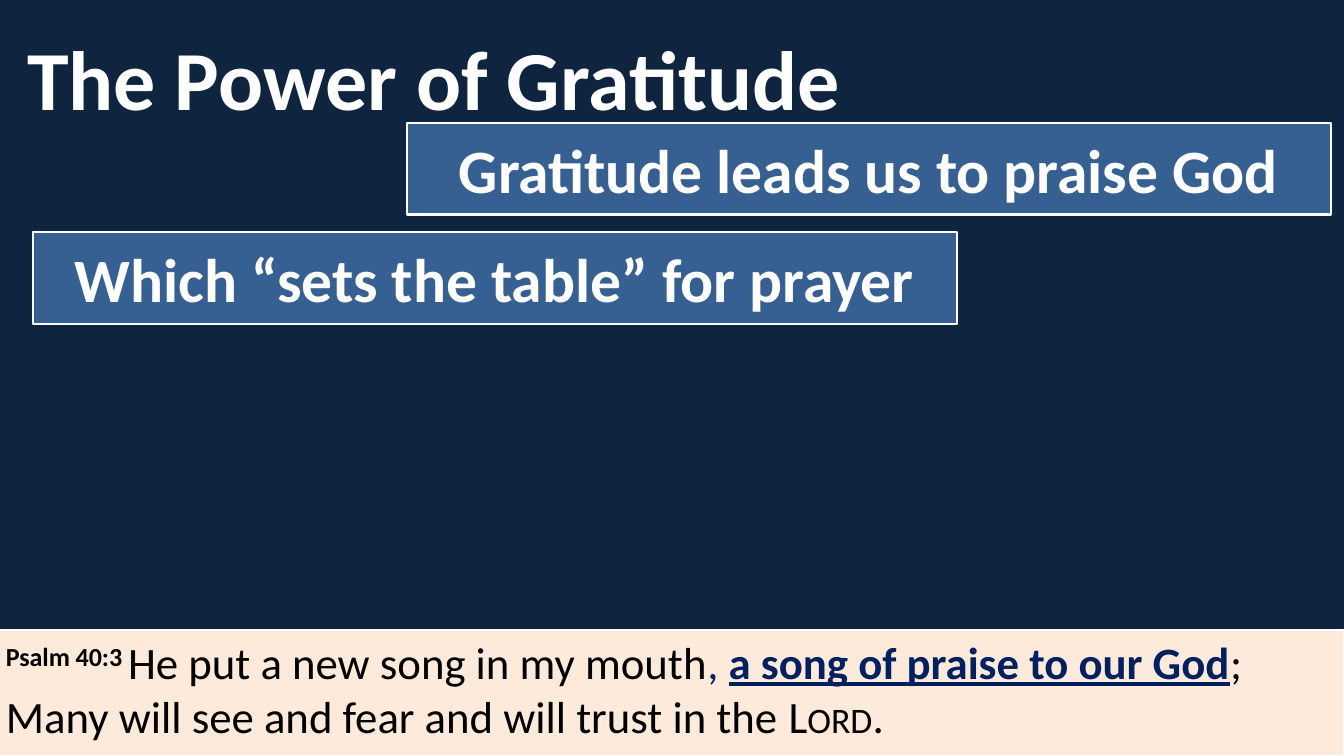
from pptx import Presentation
from pptx.dml.color import RGBColor
from pptx.enum.shapes import MSO_SHAPE as Preset
from pptx.enum.text import MSO_ANCHOR as Anchor, MSO_AUTO_SIZE as AutoSize, PP_ALIGN as Align
from pptx.util import Emu, Pt

PAGE_SIZE = (1344, 756)
SCALE = 914400 / 100.8
FONT = "Calibri"
NAVY, BLUE, CREAM, WHITE, BLACK, INK = "0F243E", "376092", "FDEADA", "FFFFFF", "000000", "002060"

TITLE = "The Power of Gratitude"
TITLE_AREA = (17, 14, 924, 126)

BANNER_SIZE = (924, 92)
BANNERS = [
    ("Gratitude leads us to praise God", (407, 123)),
    ("Which “sets the table” for prayer", (33, 232)),
]

VERSE_AREA = (-4, 630, 1348, 126)
VERSE = [
    [
        ("Psalm 40:3 ", {"bold": True}, {"baseline": "30000"}),
        ("He put a new song in my mouth", {}, {}),
        (", ", {"color": INK}, {}),
        ("a song of praise to our God", {"color": INK, "bold": True, "underline": True}, {}),
        (";", {}, {}),
    ],
    [
        ("Many will see and fear and will trust in the ", {}, {}),
        ("Lord", {}, {"cap": "small"}),
        (".", {}, {}),
    ],
]


def px(value):
    return Emu(round(value * SCALE))


def rgb(code):
    return RGBColor.from_string(code)


def place(box, area):
    for name, value in zip(("left", "top", "width", "height"), area):
        setattr(box, name, px(value))


def write(box, lines, size, color, align, anchor):
    frame = box.text_frame
    frame.word_wrap = True
    frame.auto_size = AutoSize.NONE
    frame.vertical_anchor = anchor
    for index, line in enumerate(lines):
        para = frame.add_paragraph() if index else frame.paragraphs[0]
        para.alignment = align
        for text, changes, marks in line:
            span = para.add_run()
            span.text = text
            style = {"name": FONT, "size": Pt(size), "bold": False, "color": color} | changes
            span.font.color.rgb = rgb(style.pop("color"))
            for name, value in style.items():
                setattr(span.font, name, value)
            for name, value in marks.items():
                span.font._element.set(name, value)


def add_panel(page, area, fill, line_width):
    box = page.shapes.add_shape(Preset.RECTANGLE, *map(px, area))
    box.shadow.inherit = False
    box.fill.solid()
    box.fill.fore_color.rgb = rgb(fill)
    box.line.color.rgb = rgb(WHITE)
    box.line.width = Pt(line_width)
    return box


def main():
    deck = Presentation()
    deck.slide_width, deck.slide_height = map(px, PAGE_SIZE)
    page = deck.slides.add_slide(deck.slide_layouts[5])
    page.background.fill.solid()
    page.background.fill.fore_color.rgb = rgb(NAVY)

    title = page.shapes.title
    place(title, TITLE_AREA)
    write(title, [[(TITLE, {"bold": True}, {})]], 60, WHITE, Align.LEFT, Anchor.MIDDLE)

    verse = add_panel(page, VERSE_AREA, CREAM, 1.5)
    write(verse, VERSE, 32, BLACK, Align.LEFT, Anchor.TOP)

    for text, corner in BANNERS:
        banner = add_panel(page, corner + BANNER_SIZE, BLUE, 2)
        write(banner, [[(text, {"bold": True}, {})]], 44, WHITE, Align.CENTER, Anchor.MIDDLE)

    deck.save("out.pptx")


if __name__ == "__main__":
    main()
